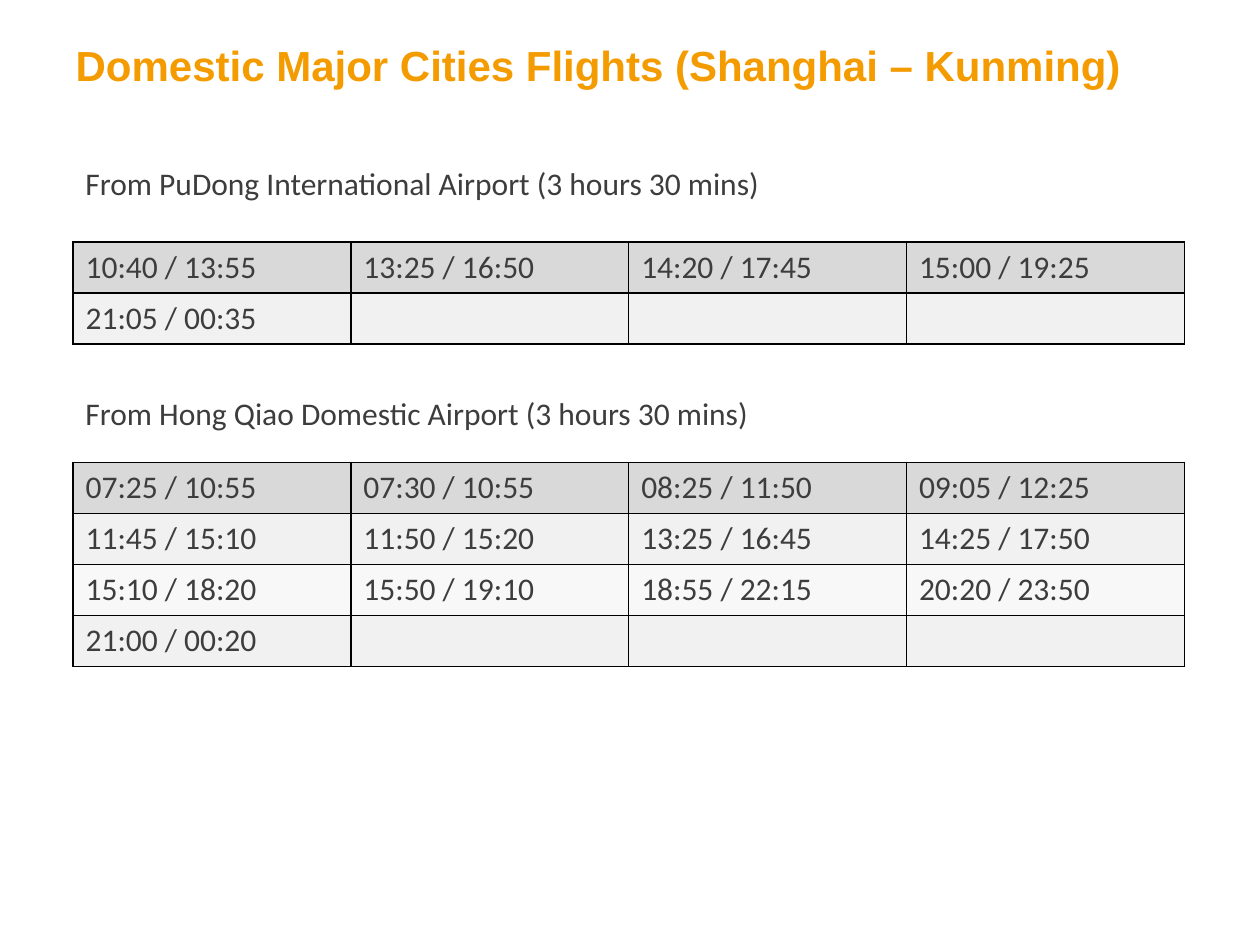
from lxml import etree
from pptx import Presentation
from pptx import util as u
from pptx.dml.color import RGBColor
from pptx.enum import text
from pptx.oxml.ns import qn

TITLE = dict(size=u.Pt(24), name="Arial", bold=True)
BODY = dict(size=u.Pt(18), name="Calibri", bold=False)
HEADER, BANDS = "D9D9D9", ("F1F1F1", "F8F8F8")
COLUMNS = 4

PUDONG = ["10:40 / 13:55", "13:25 / 16:50", "14:20 / 17:45", "15:00 / 19:25",
          "21:05 / 00:35"]
HONG_QIAO = ["07:25 / 10:55", "07:30 / 10:55", "08:25 / 11:50", "09:05 / 12:25",
             "11:45 / 15:10", "11:50 / 15:20", "13:25 / 16:45", "14:25 / 17:50",
             "15:10 / 18:20", "15:50 / 19:10", "18:55 / 22:15", "20:20 / 23:50",
             "21:00 / 00:20"]


def rgb(color):
    return RGBColor.from_string(color)


def write(tf, content, fmt, color):
    p = tf.paragraphs[0]
    p.alignment = text.PP_ALIGN.LEFT
    r = p.add_run()
    r.text = content
    for key, value in fmt.items():
        setattr(r.font, key, value)
    r.font.color.rgb = rgb(color)


def set_borders(cell, color, width):
    tc_pr = cell._tc.get_or_add_tcPr()
    for i, side in enumerate(("lnL", "lnR", "lnT", "lnB")):
        ln = etree.Element(qn(f"a:{side}"), w=str(u.Pt(width)))
        fill = etree.SubElement(ln, qn("a:solidFill"))
        etree.SubElement(fill, qn("a:srgbClr"), val=color)
        tc_pr.insert(i, ln)


def add_title(s, content, left, top, width, height):
    sp = s.shapes.title
    sp.left, sp.top, sp.width, sp.height = map(u.Inches, (left, top, width, height))
    tf = sp.text_frame
    tf.word_wrap = True
    tf.vertical_anchor = text.MSO_ANCHOR.MIDDLE
    write(tf, content, TITLE, "F49B00")


def add_heading(s, content, left, top, width, height):
    sp = s.shapes.add_textbox(*map(u.Inches, (left, top, width, height)))
    tf = sp.text_frame
    tf.word_wrap = True
    tf.auto_size = text.MSO_AUTO_SIZE.SHAPE_TO_FIT_TEXT
    write(tf, content, BODY, "3D3D3D")


def add_timetable(s, flights, left, top, width, height):
    rows = -(-len(flights) // COLUMNS)
    box = map(u.Inches, (left, top, width, height))
    table = s.shapes.add_table(rows, COLUMNS, *box).table
    for i, cell in enumerate(table.iter_cells()):
        row = i // COLUMNS
        cell.fill.solid()
        cell.fill.fore_color.rgb = rgb(BANDS[(row - 1) % 2] if row else HEADER)
        set_borders(cell, "000000", 1)
        if i < len(flights):
            write(cell.text_frame, flights[i], BODY, "3D3D3D")


def main():
    prs = Presentation()
    prs.slide_width, prs.slide_height = u.Inches(10), u.Inches(7.5)
    s = prs.slides.add_slide(prs.slide_layouts[5])
    add_title(s, "Domestic Major Cities Flights (Shanghai – Kunming)", 0.5, 0.05, 9, 0.93)
    add_heading(s, "From PuDong International Airport (3 hours 30 mins)", 0.58, 1.25, 6.08, 0.4)
    add_timetable(s, PUDONG, 0.58, 1.92, 8.82, 0.81)
    add_heading(s, "From Hong Qiao Domestic Airport (3 hours 30 mins)", 0.58, 3.08, 6.08, 0.4)
    add_timetable(s, HONG_QIAO, 0.58, 3.67, 8.82, 1.62)
    prs.save("out.pptx")


if __name__ == "__main__":
    main()
